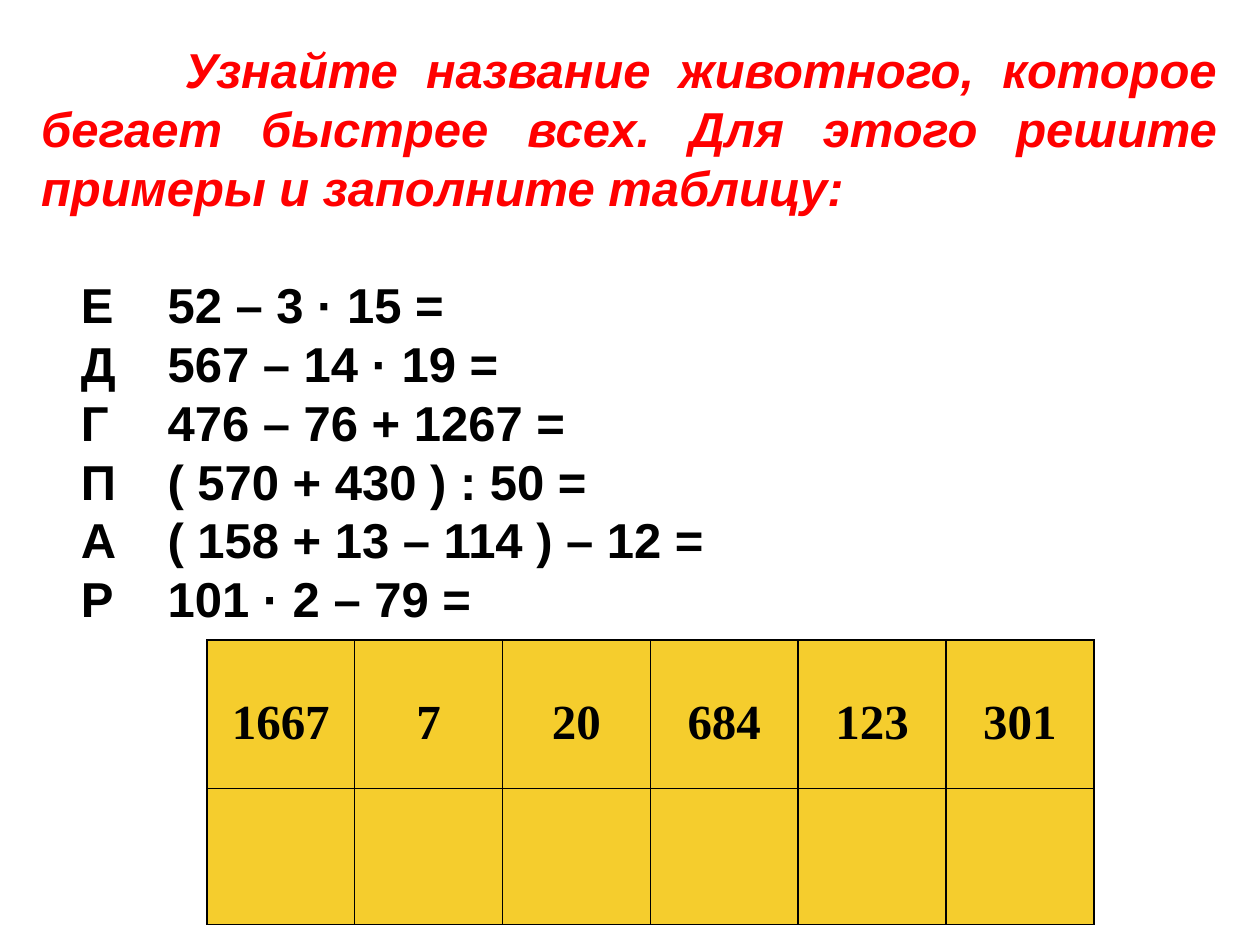
"""Build a maths puzzle slide with examples and an answer table."""
from lxml.etree import SubElement
from pptx import Presentation
from pptx.dml.color import RGBColor
from pptx.enum.text import MSO_ANCHOR, PP_ALIGN
from pptx.oxml.ns import qn
from pptx.util import Cm, Pt

COLORS = {"title": "FF0000", "text": "000000", "cell": "F5CD2D", "border": "000000"}
TASK = ("Узнайте название животного, которое бегает быстрее всех. "
        "Для этого решите примеры и заполните таблицу:")
EXAMPLES = [
    ("Е", "52 – 3 · 15 ="),
    ("Д", "567 – 14 · 19 ="),
    ("Г", "476 – 76 + 1267 ="),
    ("П", "( 570 + 430 ) : 50 ="),
    ("А", "( 158 + 13 – 114 ) – 12 ="),
    ("Р", "101 · 2 – 79 ="),
]
ANSWERS = ["1667", "7", "20", "684", "123", "301"]
LINE_HEIGHT = Pt(33.6)


def style_paragraph(paragraph, font_name, color, align):
    paragraph.alignment = align
    font = paragraph.font
    font.name, font.size, font.bold = font_name, Pt(28), True
    font.color.rgb = RGBColor.from_string(COLORS[color])


def set_indent(paragraph, left, first):
    properties = paragraph._p.get_or_add_pPr()
    properties.set("marL", str(left))
    properties.set("indent", str(first))


presentation = Presentation()
presentation.slide_width, presentation.slide_height = Cm(25.4), Cm(19.05)
slide = presentation.slides.add_slide(presentation.slide_layouts[6])

text_box = slide.shapes.add_textbox(Cm(0.58), Cm(0.8), Cm(24.2), Cm(11.9))
frame = text_box.text_frame
frame.word_wrap = True
frame.vertical_anchor = MSO_ANCHOR.TOP
frame.margin_top = frame.margin_bottom = 0

task = frame.paragraphs[0]
task.text = TASK
task.line_spacing = LINE_HEIGHT
task.font.italic = True
style_paragraph(task, "Arial", "title", PP_ALIGN.JUSTIFY)
set_indent(task, 0, Cm(2.9))

for index, (letter, expression) in enumerate(EXAMPLES):
    example = frame.add_paragraph()
    example.text = f"{letter}\t{expression}"
    example.line_spacing = LINE_HEIGHT
    example.space_before = LINE_HEIGHT if index == 0 else Pt(0)
    style_paragraph(example, "Arial", "text", PP_ALIGN.LEFT)
    set_indent(example, Cm(2.55), Cm(-1.75))

table = slide.shapes.add_table(
    2, len(ANSWERS), Cm(4.17), Cm(12.9), Cm(17.88), Cm(5.74)).table
table.rows[0].height, table.rows[1].height = Cm(3), Cm(2.74)
for column in table.columns:
    column.width = Cm(2.98)

for cell in table.iter_cells():
    properties = cell._tc.get_or_add_tcPr()
    for side in ("a:lnL", "a:lnR", "a:lnT", "a:lnB"):
        border = SubElement(properties, qn(side), w=str(Pt(1)))
        fill = SubElement(border, qn("a:solidFill"))
        SubElement(fill, qn("a:srgbClr"), val=COLORS["border"])
    cell.fill.solid()
    cell.fill.fore_color.rgb = RGBColor.from_string(COLORS["cell"])

for cell, answer in zip(table.rows[0].cells, ANSWERS):
    cell.text = answer
    cell.margin_left = cell.margin_right = Cm(0.18)
    cell.margin_top, cell.margin_bottom = Cm(1.13), 0
    style_paragraph(cell.text_frame.paragraphs[0], "Times New Roman", "text", PP_ALIGN.CENTER)

presentation.save("out.pptx")
